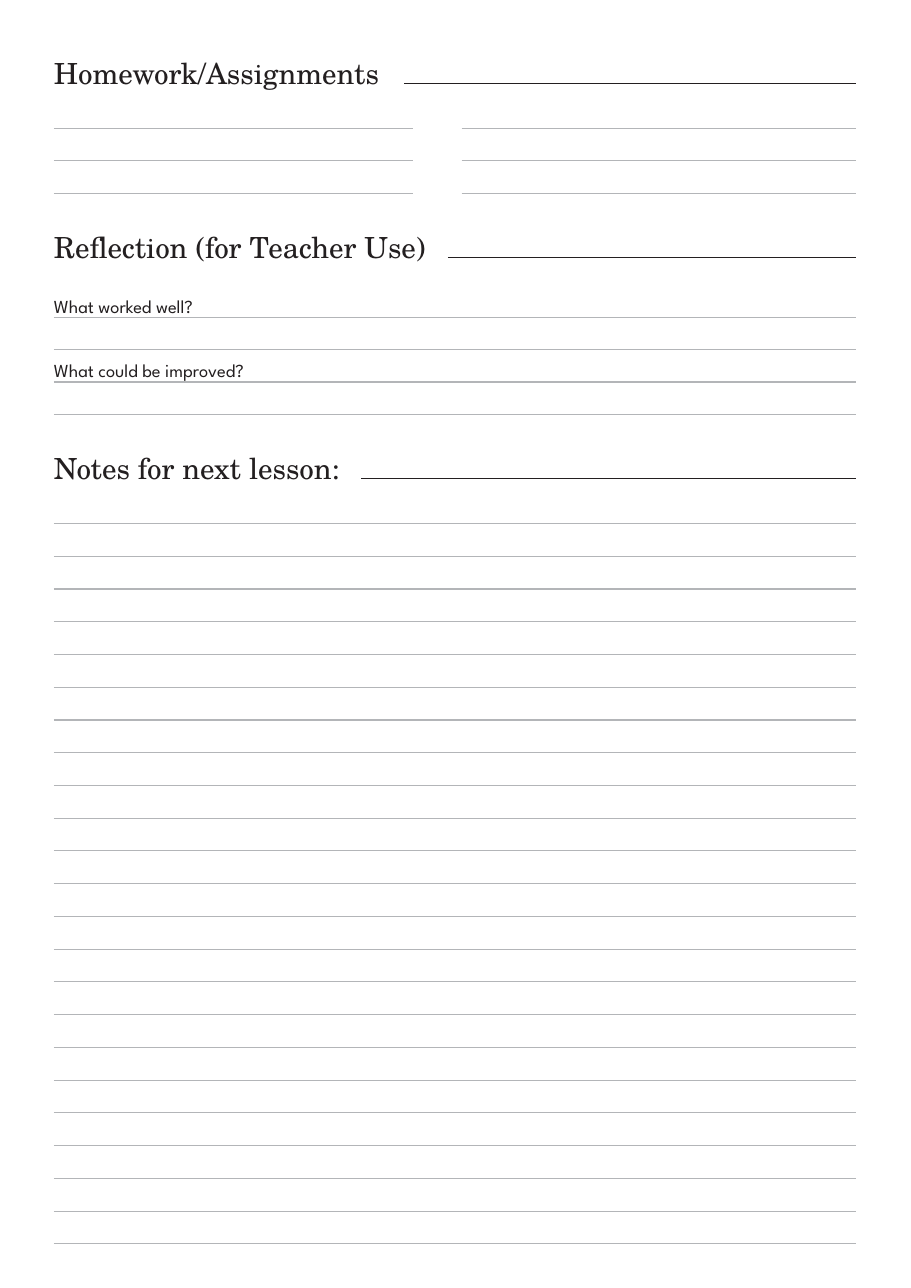
from lxml.etree import SubElement
from pptx import Presentation
from pptx.dml.color import RGBColor
from pptx.enum.shapes import MSO_CONNECTOR
from pptx.oxml.ns import qn
from pptx.util import Pt

INK = RGBColor(0x23, 0x1F, 0x20)
RULE = RGBColor(0xB3, 0xB5, 0xB8)
HEADING_FONT = "TeX Gyre Schola"
BODY_FONT = "League Spartan"
LEFT, WIDTH = 35.3, 524.5
PITCH = 21.1
NOTES_PITCH = 21.4


def add_text(shapes, text, x, y, w, h, font, size):
    """Add a line of text without margins."""
    tf = shapes.add_textbox(Pt(x), Pt(y), Pt(w), Pt(h)).text_frame
    tf.margin_left = tf.margin_right = tf.margin_top = tf.margin_bottom = 0
    tf.word_wrap = True
    p = tf.paragraphs[0]
    p.text = text
    r = p.runs[0]
    r.font.name = font
    r.font.size = Pt(size)
    r.font.color.rgb = INK


def add_rule(shapes, x, y, w, color):
    """Draw one thin horizontal rule."""
    line = shapes.add_connector(MSO_CONNECTOR.STRAIGHT, Pt(x), Pt(y), Pt(x + w), Pt(y))
    line.line.color.rgb = color
    line.line.width = Pt(0.75)
    SubElement(line._element.spPr, qn("a:effectLst"))


def add_writing_lines(shapes, x, y, w, count, pitch):
    """Draw evenly spaced lines to write on."""
    for i in range(count):
        add_rule(shapes, x, y + i * pitch, w, RULE)


def add_heading(shapes, text, x, y, w, text_w, rule_offset):
    """Set a section heading with a rule running to the right edge."""
    add_text(shapes, text, x, y, text_w, 23, HEADING_FONT, 19)
    add_rule(shapes, x + rule_offset, y + 18.4, w - rule_offset, INK)


def add_homework(s, x, y, w):
    """Build the homework section with two columns of lines."""
    shapes = s.shapes.add_group_shape().shapes
    add_heading(shapes, "Homework/Assignments", x, y, w, 228, 229)
    for offset, column_w in ((0, 234.7), (266.5, w - 266.5)):
        add_writing_lines(shapes, x + offset, y + 48, column_w, 3, PITCH)


def add_reflection(s, x, y, w):
    """Build the reflection section with a prompt on every second line."""
    shapes = s.shapes.add_group_shape().shapes
    add_heading(shapes, "Reflection (for Teacher Use)", x, y, w, 258, 257.5)
    first_line = y + 57.6
    add_writing_lines(shapes, x, first_line, w, 4, PITCH)
    for i, prompt in enumerate(("What worked well?", "What could be improved?")):
        top = first_line + 2 * i * PITCH - 14.6
        add_text(shapes, prompt, x, top, w, 14.4, BODY_FONT, 12)


def add_notes(s, x, y, w):
    """Build the notes section that fills the rest of the page."""
    shapes = s.shapes.add_group_shape().shapes
    add_heading(shapes, "Notes for next lesson:", x, y, w, 197.5, 200.7)
    add_writing_lines(shapes, x, y + 47.9, w, 23, NOTES_PITCH)


def main():
    """Build the lesson planner page."""
    prs = Presentation()
    prs.slide_width, prs.slide_height = Pt(595.44), Pt(841.68)
    s = prs.slides.add_slide(prs.slide_layouts[6])
    add_homework(s, LEFT, 36, WIDTH)
    add_reflection(s, LEFT, 149.8, WIDTH)
    add_notes(s, LEFT, 294.2, WIDTH)
    prs.save("out.pptx")


if __name__ == "__main__":
    main()
